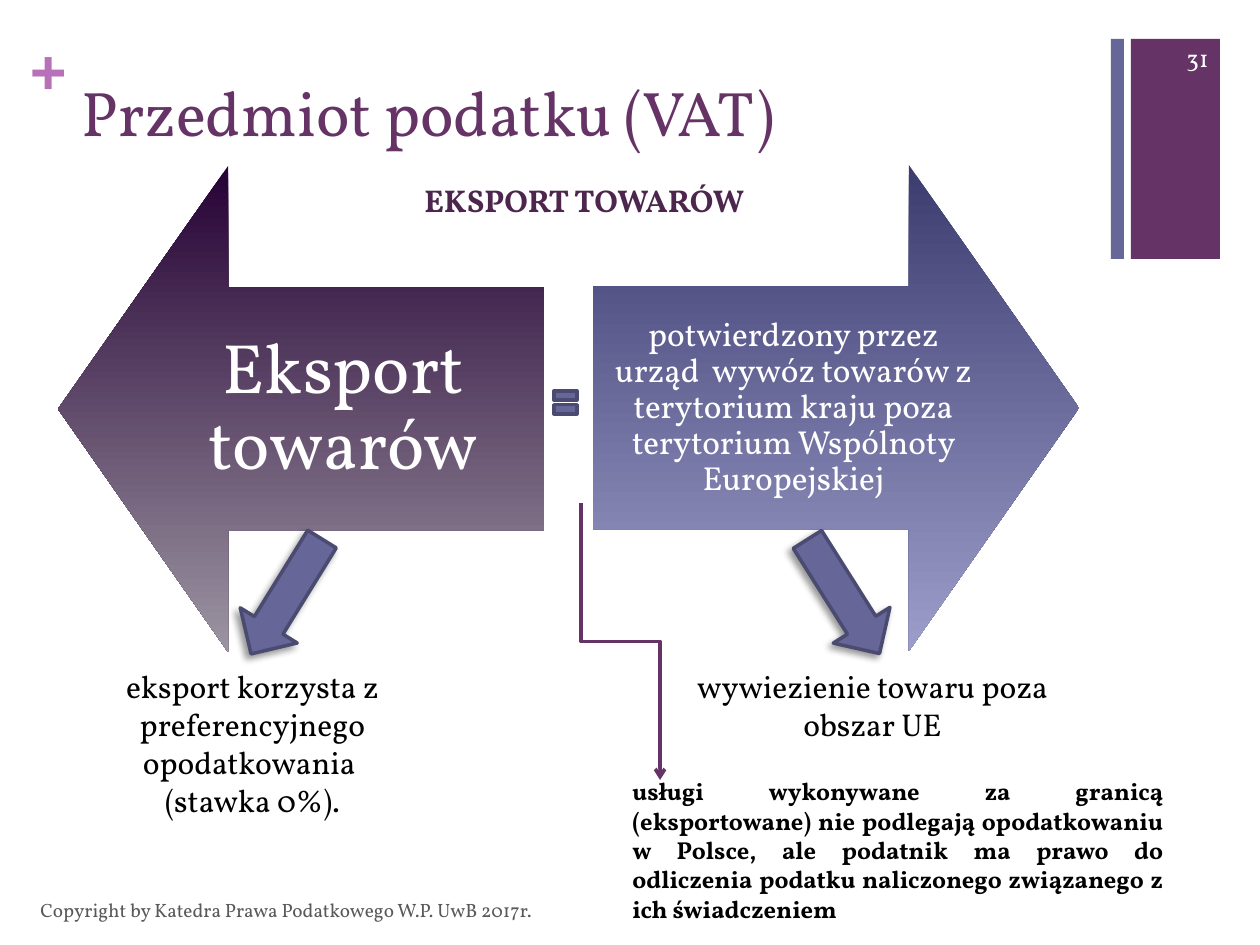
import pptx
import pptx.dml.color
import pptx.enum.shapes
import pptx.enum.text
import pptx.oxml
import pptx.oxml.ns
import pptx.util

SHAPES = pptx.enum.shapes.MSO_SHAPE
ALIGN = pptx.enum.text.PP_ALIGN
ANCHOR = pptx.enum.text.MSO_ANCHOR
FONT = "Vollkorn"
EMU_PER_PX = 914400 / 126
COLORS = {
    "plum": "663366", "slate": "666699", "slate_edge": "4B4B71",
    "pink": "B870B8", "heading": "4D264D", "footer": "595959",
    "white": "FFFFFF", "black": "000000",
    "export_top": "260235", "export_bottom": "9B94A1",
    "meaning_top": "3C3C6F", "meaning_bottom": "9D9DCB",
}


def px(length):
    return pptx.util.Emu(round(length * EMU_PER_PX))


def box(*lengths):
    return [px(length) for length in lengths]


def rgb(name):
    return pptx.dml.color.RGBColor.from_string(COLORS[name])


def write(frame, text, size, color, align=ALIGN.LEFT, anchor=ANCHOR.TOP,
          bold=False, font=FONT, inset=None, spacing=None):
    frame.text = text
    frame.word_wrap = True
    frame.auto_size = pptx.enum.text.MSO_AUTO_SIZE.NONE
    frame.vertical_anchor = anchor
    if inset is not None:
        frame.margin_left = frame.margin_right = px(inset)
        frame.margin_top = frame.margin_bottom = px(inset)
    for paragraph in frame.paragraphs:
        paragraph.alignment = align
        paragraph.line_spacing = spacing
        for run in paragraph.runs:
            run.font.name = font
            run.font.size = pptx.util.Pt(size)
            run.font.bold = bold
            run.font.color.rgb = rgb(color)


def add_text(slide, place, text, size, color, **style):
    write(slide.shapes.add_textbox(*box(*place)).text_frame, text, size, color, **style)


def add_solid(slide, kind, place, fill, edge=None):
    solid = slide.shapes.add_shape(kind, *box(*place))
    solid.shadow.inherit = False
    solid.fill.solid()
    solid.fill.fore_color.rgb = rgb(fill)
    if edge:
        solid.line.color.rgb = rgb(edge)
        solid.line.width = pptx.util.Pt(2)
    else:
        solid.line.fill.background()
    return solid


def add_big_arrow(slide, kind, place, shades, text, size, inset):
    arrow = slide.shapes.add_shape(kind, *box(*place))
    arrow.shadow.inherit = False
    arrow.adjustments[0], arrow.adjustments[1] = 0.5, 0.35
    arrow.line.fill.background()
    arrow.fill.gradient()
    arrow.fill.gradient_angle = 270
    for stop, shade in zip(arrow.fill.gradient_stops, shades):
        stop.color.rgb = rgb(shade)
    write(arrow.text_frame, text, size, "white", align=ALIGN.CENTER,
          anchor=ANCHOR.MIDDLE, inset=inset, spacing=0.9)


def add_pointer(slide, place, rotation):
    pointer = add_solid(slide, SHAPES.DOWN_ARROW, place, "slate", "slate_edge")
    pointer.rotation = rotation
    effects = pointer._element.spPr.find(pptx.oxml.ns.qn("a:effectLst"))
    effects.append(pptx.oxml.parse_xml(
        f'<a:outerShdw {pptx.oxml.ns.nsdecls("a")} blurRad="50800" dist="38100" '
        f'dir="8100000" algn="tr" rotWithShape="0"><a:srgbClr val="{COLORS["black"]}">'
        '<a:alpha val="40000"/></a:srgbClr></a:outerShdw>'))


def add_elbow_down(slide, start, end, color):
    """Elbow leaving downwards: a sideways elbow turned by 270 degrees."""
    middle_x, middle_y = (start[0] + end[0]) / 2, (start[1] + end[1]) / 2
    half_run, half_rise = (end[1] - start[1]) / 2, (end[0] - start[0]) / 2
    elbow = slide.shapes.add_connector(
        pptx.enum.shapes.MSO_CONNECTOR.ELBOW,
        *box(middle_x + half_run, middle_y - half_rise,
             middle_x - half_run, middle_y + half_rise))
    elbow.line.color.rgb = rgb(color)
    elbow.line.width = pptx.util.Pt(2)
    properties = elbow._element.spPr
    properties.find(pptx.oxml.ns.qn("a:xfrm")).set("rot", str(270 * 60000))
    namespace = pptx.oxml.ns.nsdecls("a")
    elbow.line._get_or_add_ln().append(
        pptx.oxml.parse_xml(f'<a:tailEnd {namespace} type="arrow"/>'))
    properties.append(pptx.oxml.parse_xml(f"<a:effectLst {namespace}/>"))


def main():
    deck = pptx.Presentation()
    deck.slide_width, deck.slide_height = px(1260), px(945)
    slide = deck.slides.add_slide(deck.slide_layouts[5])

    # Corner decoration
    add_solid(slide, SHAPES.RECTANGLE, (1131, 39, 89, 220), "plum")
    add_solid(slide, SHAPES.RECTANGLE, (1111, 39, 13, 220), "slate")
    add_text(slide, (30, 32, 37, 77), "+", 36, "pink", bold=True, font="Arial", inset=0)

    # Title, footer and page number
    title = slide.shapes.title
    title.left, title.top, title.width, title.height = box(69, 67, 1041, 154)
    write(title.text_frame, "Przedmiot podatku (VAT)", 36, "plum")
    add_text(slide, (28, 885, 844, 50),
             "Copyright by Katedra Prawa Podatkowego W.P. UwB 2017r.",
             11, "footer", anchor=ANCHOR.MIDDLE)
    add_text(slide, (1144, 33, 77, 50), "31", 14, "white",
             align=ALIGN.RIGHT, anchor=ANCHOR.MIDDLE)

    # Term = definition
    add_big_arrow(slide, SHAPES.LEFT_ARROW, (58, 166, 486, 486),
                  ("export_top", "export_bottom"), "Eksport towarów", 40, 39)
    add_big_arrow(slide, SHAPES.RIGHT_ARROW, (593, 165, 486, 486),
                  ("meaning_top", "meaning_bottom"),
                  "potwierdzony przez urząd  wywóz towarów z terytorium kraju "
                  "poza terytorium Wspólnoty Europejskiej", 19, 19)
    add_solid(slide, SHAPES.MATH_EQUAL, (550, 383, 31, 39), "slate", "slate_edge")

    # Consequences below the arrows
    add_pointer(slide, (253, 529, 67, 135), 31.7)
    add_pointer(slide, (810, 529, 67, 135), 327.7)
    add_text(slide, (679, 661, 387, 127), "wywiezienie towaru poza obszar UE",
             18, "black", align=ALIGN.CENTER)
    add_text(slide, (620, 770, 556, 131),
             "usługi wykonywane za granicą (eksportowane) nie podlegają "
             "opodatkowaniu w Polsce, ale podatnik ma prawo do odliczenia "
             "podatku naliczonego związanego z ich świadczeniem",
             14, "black", align=ALIGN.JUSTIFY, bold=True)
    add_text(slide, (44, 661, 417, 165),
             "eksport korzysta z preferencyjnego opodatkowania \n(stawka 0%).",
             18, "black", align=ALIGN.CENTER)

    # Heading and the link to the note on services
    add_text(slide, (412, 175, 507, 50), "EKSPORT TOWARÓW", 18, "heading", bold=True)
    add_elbow_down(slide, (581, 503), (660, 780), "plum")

    deck.save("out.pptx")


if __name__ == "__main__":
    main()
